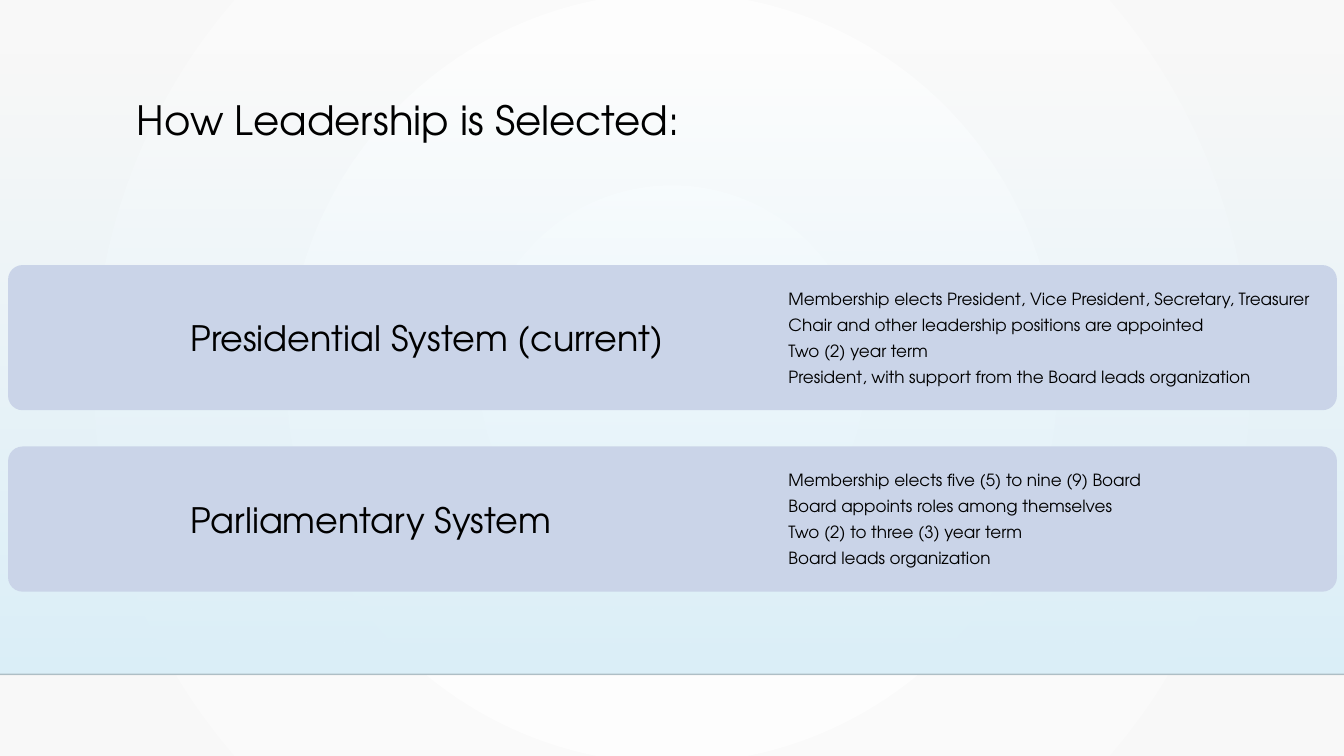
from lxml.etree import SubElement as Sub
from pptx import Presentation
from pptx.dml.color import RGBColor as Rgb
from pptx.enum.shapes import MSO_CONNECTOR as Conn, MSO_SHAPE as Shape
from pptx.enum.text import MSO_ANCHOR as Anchor
from pptx.oxml import parse_xml
from pptx.oxml.ns import nsdecls, qn
from pptx.util import Inches, Pt

HUES = {"text": "000000", "band": "CAD4E8", "sky": "DBEFF8",
        "white": "FFFFFF", "edge": "F8F8F8", "rule": "000001"}
FACE = "TeX Gyre Adventor"
WIDE, HIGH = 13.33, 7.5
FLOOR = 6.69
TOP, STEP, TALL = 2.63, 1.8, 1.44

SYSTEMS = [
    ("Presidential System (current)", [
        "Membership elects President, Vice President, Secretary, Treasurer",
        "Chair and other leadership positions are appointed",
        "Two (2) year term",
        "President, with support from the Board leads organization"]),
    ("Parliamentary System", [
        "Membership elects five (5) to nine (9) Board",
        "Board appoints roles among themselves",
        "Two (2) to three (3) year term",
        "Board leads organization"]),
]


def color(name):
    return Rgb.from_string(HUES[name])


def box(*sizes):
    return [Inches(size) for size in sizes]


def fade(fill, root, first, last, tail, clear=False):
    fill.solid()
    old = next(root.iter(qn("a:solidFill")))
    alpha = '<a:alpha val="0"/>' if clear else ""
    grad = parse_xml(
        f'<a:gradFill {nsdecls("a")} rotWithShape="1"><a:gsLst>'
        f'<a:gs pos="0"><a:srgbClr val="{HUES[first]}">{alpha}</a:srgbClr></a:gs>'
        f'<a:gs pos="100000"><a:srgbClr val="{HUES[last]}"/></a:gs>'
        f'</a:gsLst>{tail}</a:gradFill>')
    old.getparent().replace(old, grad)


def add_back(slide):
    fade(slide.background.fill, slide.element, "white", "edge",
         '<a:path path="circle"><a:fillToRect l="50000" t="50000" '
         'r="50000" b="50000"/></a:path>')


def add_shape(slide, kind, *place):
    shape = slide.shapes.add_shape(kind, *box(*place))
    shape.shadow.inherit = False
    shape.line.fill.background()
    return shape


def add_sky(slide):
    sky = add_shape(slide, Shape.RECTANGLE, 0, 0.51, WIDE, FLOOR - 0.51)
    fade(sky.fill, sky.element.spPr, "sky", "sky",
         '<a:lin ang="5400000" scaled="0"/>', True)


def add_rule(slide):
    rule = slide.shapes.add_connector(
        Conn.STRAIGHT, *box(0, FLOOR, WIDE, FLOOR))
    rule.line.width = Pt(1)
    rule.line.color.rgb = color("rule")
    props = rule.element.spPr
    Sub(next(props.iter(qn("a:srgbClr"))), qn("a:alpha"), val="20000")
    Sub(props, qn("a:effectLst"))


def add_text(slide, lines, place, size, pad, anchor=Anchor.MIDDLE, **form):
    frame = slide.shapes.add_textbox(*box(*place)).text_frame
    side, edge = box(*pad)
    style = {"word_wrap": True, "vertical_anchor": anchor,
             "margin_left": side, "margin_right": side,
             "margin_top": edge, "margin_bottom": edge}
    for key, value in style.items():
        setattr(frame, key, value)
    for num, line in enumerate(lines):
        para = frame.add_paragraph() if num else frame.paragraphs[0]
        para.text = line
        if num:
            para.space_before = Pt(4.2)
        for key, value in form.items():
            setattr(para, key, value)
        font = para.font
        font.name, font.size = FACE, Pt(size)
        font.color.rgb = color("text")


def add_band(slide, top, name, facts):
    band = add_shape(slide, Shape.ROUNDED_RECTANGLE, 0.08, top, 13.18, TALL)
    band.adjustments[0] = 0.1
    band.fill.solid()
    band.fill.fore_color.rgb = color("band")
    pad = (0.15, 0.15)
    add_text(slide, [name], (1.74, top, 5.93, TALL), 25, pad)
    add_text(slide, facts, (7.67, top, 5.59, TALL), 12, pad)


def main():
    deck = Presentation()
    deck.slide_width, deck.slide_height = box(WIDE, HIGH)
    slide = deck.slides.add_slide(deck.slide_layouts[6])
    add_back(slide)
    add_sky(slide)
    add_rule(slide)
    add_text(slide, ["How Leadership is Selected:"], (1.26, 0.95, 10.5, 1.15),
             28.8, (0.1, 0.05), Anchor.TOP, line_spacing=0.9)
    for num, (name, facts) in enumerate(SYSTEMS):
        add_band(slide, TOP + num * STEP, name, facts)
    deck.save("out.pptx")


if __name__ == "__main__":
    main()
